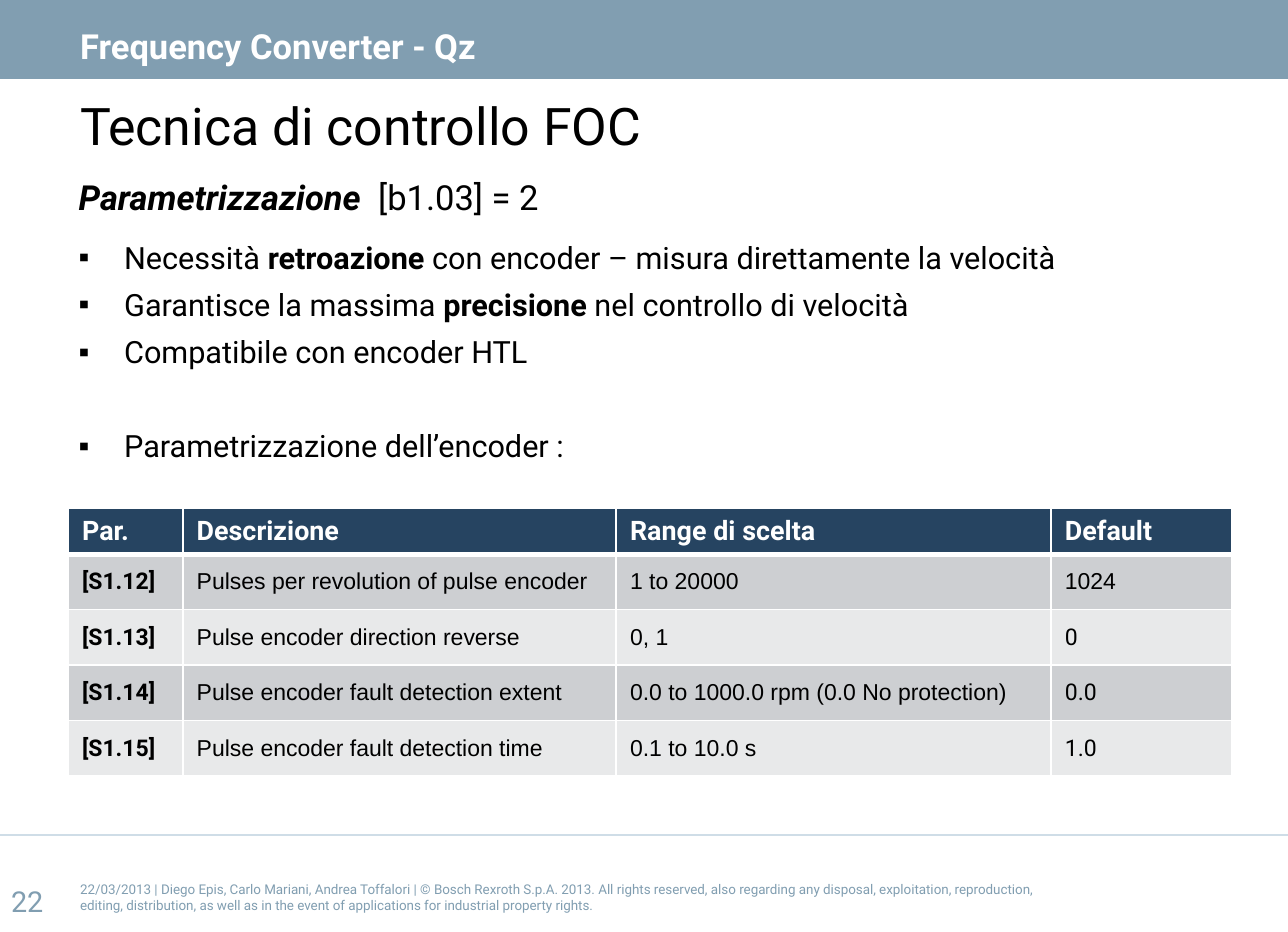
from pptx import Presentation
from pptx.dml.color import RGBColor
from pptx.enum.shapes import MSO_CONNECTOR, MSO_SHAPE
from pptx.enum.text import MSO_ANCHOR as Anchor
from pptx.oxml.ns import qn
from pptx.util import Emu, Inches, Pt
from lxml.etree import SubElement

SLIDE_WIDTH, SLIDE_HEIGHT = Inches(9.33), Inches(6.75)
STEEL, NAVY, WHITE, BLACK, PALE = "819EB1", "264461", "FFFFFF", "000000", "CFDDE7"
BANDS = ("CDCFD2", "E8E9EA")
MARGIN = 6.22
LINE_SPACING = 1.11
BULLET_INDENT = Inches(0.33)
COLUMN_SHARES = (8.9, 33.65, 33.76, 14.04)
HEADER_ROW, DATA_ROW = 4.89, 5.95

COPYRIGHT = (
    "22/03/2013 | Diego Epis, Carlo Mariani, Andrea Toffalori | "
    "© Bosch Rexroth S.p.A. 2013. All rights reserved, also regarding any disposal, "
    "exploitation, reproduction, editing, distribution, as well as in the event of "
    "applications for industrial property rights."
)
BULLETS = (
    (9.3, ("Necessità ", "retroazione", " con encoder – misura direttamente la velocità")),
    (3.3, ("Garantisce la massima ", "precisione", " nel controllo di velocità")),
    (3.3, ("Compatibile con encoder HTL",)),
    (27.8, ("Parametrizzazione dell’encoder :",)),
)
HEADINGS = ("Par.", "Descrizione", "Range di scelta", "Default")
PARAMETERS = (
    ("[S1.12]", "Pulses per revolution of pulse encoder", "1 to 20000", "1024", "Arial"),
    ("[S1.13]", "Pulse encoder direction reverse", "0, 1", "0", "Roboto"),
    ("[S1.14]", "Pulse encoder fault detection extent",
     "0.0 to 1000.0 rpm (0.0 No protection)", "0.0", "Roboto"),
    ("[S1.15]", "Pulse encoder fault detection time", "0.1 to 10.0 s", "1.0", "Roboto"),
)


def across(percent):
    return Emu(int(SLIDE_WIDTH * percent / 100))


def down(percent):
    return Emu(int(SLIDE_HEIGHT * percent / 100))


def area(left, top, width, height):
    return across(left), down(top), across(width), down(height)


def color(hex_value):
    return RGBColor.from_string(hex_value)


def style(paragraph, size, hex_value, name="Roboto", bold=None):
    font = paragraph.font
    font.size, font.name, font.bold = Pt(size), name, bold
    font.color.rgb = color(hex_value)


def add_frame(slide, place, anchor=Anchor.TOP, inset_top=0.0, wrap=True):
    frame = slide.shapes.add_textbox(*area(*place)).text_frame
    frame.word_wrap = wrap
    frame.vertical_anchor = anchor
    frame.margin_left = frame.margin_right = frame.margin_bottom = 0
    frame.margin_top = Inches(inset_top)
    return frame


def add_label(slide, text, place, size, hex_value, bold=None, spacing=None, **layout):
    paragraph = add_frame(slide, place, **layout).paragraphs[0]
    paragraph.text = text
    paragraph.line_spacing = spacing
    style(paragraph, size, hex_value, bold=bold)


def add_band(slide, height):
    band = slide.shapes.add_shape(MSO_SHAPE.RECTANGLE, *area(0, 0, 100, height))
    band.shadow.inherit = False
    band.fill.solid()
    band.fill.fore_color.rgb = color(STEEL)
    band.line.fill.background()


def add_rule(slide, level, hex_value):
    rule = slide.shapes.add_connector(
        MSO_CONNECTOR.STRAIGHT, 0, down(level), SLIDE_WIDTH, down(level))
    rule.line.color.rgb = color(hex_value)
    rule.line.width = Pt(1)
    SubElement(rule._element.spPr, qn("a:effectLst"))


def add_heading(paragraph):
    properties = paragraph._p.get_or_add_pPr()
    tabs = SubElement(properties, qn("a:tabLst"))
    SubElement(tabs, qn("a:tab"), pos=str(Inches(2.17)), algn="l")
    paragraph.line_spacing = LINE_SPACING
    style(paragraph, 18, BLACK)
    topic = paragraph.add_run()
    topic.text = "Parametrizzazione"
    topic.font.bold = topic.font.italic = True
    paragraph.add_run().text = "\t[b1.03] = 2"


def add_bullet(paragraph, space_before, parts):
    properties = paragraph._p.get_or_add_pPr()
    properties.set("marL", str(BULLET_INDENT))
    properties.set("indent", str(-BULLET_INDENT))
    SubElement(properties, qn("a:buFont"), typeface="Arial")
    SubElement(properties, qn("a:buChar"), char="▪")
    paragraph.line_spacing = LINE_SPACING
    paragraph.space_before = Pt(space_before)
    style(paragraph, 16, BLACK)
    for index, part in enumerate(parts):
        run = paragraph.add_run()
        run.text = part
        if index == 1:
            run.font.bold = True


def add_body(slide):
    frame = add_frame(slide, (6.11, 17.33, 89.07, 32.59), inset_top=0.07)
    add_heading(frame.paragraphs[0])
    for space_before, parts in BULLETS:
        add_bullet(frame.add_paragraph(), space_before, parts)


def add_borders(cell, widths):
    properties = cell._tc.get_or_add_tcPr()
    for side, width in zip("LRTB", widths):
        border = SubElement(properties, qn(f"a:ln{side}"), w=str(Pt(width)))
        fill = SubElement(border, qn("a:solidFill"))
        SubElement(fill, qn("a:srgbClr"), val=WHITE)


def fill_cell(cell, text, background, widths, anchor, **font):
    add_borders(cell, widths)
    cell.fill.solid()
    cell.fill.fore_color.rgb = color(background)
    cell.vertical_anchor = anchor
    paragraph = cell.text_frame.paragraphs[0]
    paragraph.text = text
    style(paragraph, **font)


def add_parameter_table(slide):
    row_shares = [HEADER_ROW] + [DATA_ROW] * len(PARAMETERS)
    place = area(5.3, 54.52, sum(COLUMN_SHARES), sum(row_shares))
    table = slide.shapes.add_table(len(row_shares), len(COLUMN_SHARES), *place).table
    for column, share in zip(table.columns, COLUMN_SHARES):
        column.width = across(share)
    for row, share in zip(table.rows, row_shares):
        row.height = down(share)
    for column, heading in enumerate(HEADINGS):
        fill_cell(table.cell(0, column), heading, NAVY, (1, 1, 1, 3), Anchor.TOP,
                  size=14, hex_value=WHITE, bold=True)
    for row, (*values, default_font) in enumerate(PARAMETERS, 1):
        fonts = ("Roboto", "Arial", "Arial", default_font)
        for column, (value, name) in enumerate(zip(values, fonts)):
            top_border = 3 if row == 1 else 1
            fill_cell(table.cell(row, column), value, BANDS[(row - 1) % 2],
                      (1, 1, top_border, 1), Anchor.MIDDLE,
                      size=12, hex_value=BLACK, name=name, bold=column == 0)


def main():
    deck = Presentation()
    deck.slide_width, deck.slide_height = SLIDE_WIDTH, SLIDE_HEIGHT
    slide = deck.slides.add_slide(deck.slide_layouts[6])
    add_band(slide, 8.59)
    add_rule(slide, 8.59, WHITE)
    add_rule(slide, 89.63, PALE)
    add_label(slide, "22", (0.86, 94.81, 4.5, 3.11), 15, STEEL, wrap=False)
    add_label(slide, COPYRIGHT, (MARGIN, 93.93, 75.03, 4.74), 7, STEEL,
              anchor=Anchor.MIDDLE)
    add_label(slide, "Frequency Converter - Qz", (MARGIN, 0, 85.74, 8.44), 18, WHITE,
              bold=True, spacing=LINE_SPACING, anchor=Anchor.MIDDLE, inset_top=0.06)
    add_body(slide)
    add_label(slide, "Tecnica di controllo FOC", (MARGIN, 9.19, 89.39, 7.56), 27, BLACK,
              spacing=LINE_SPACING, inset_top=0.01)
    add_parameter_table(slide)
    deck.save("out.pptx")


if __name__ == "__main__":
    main()
